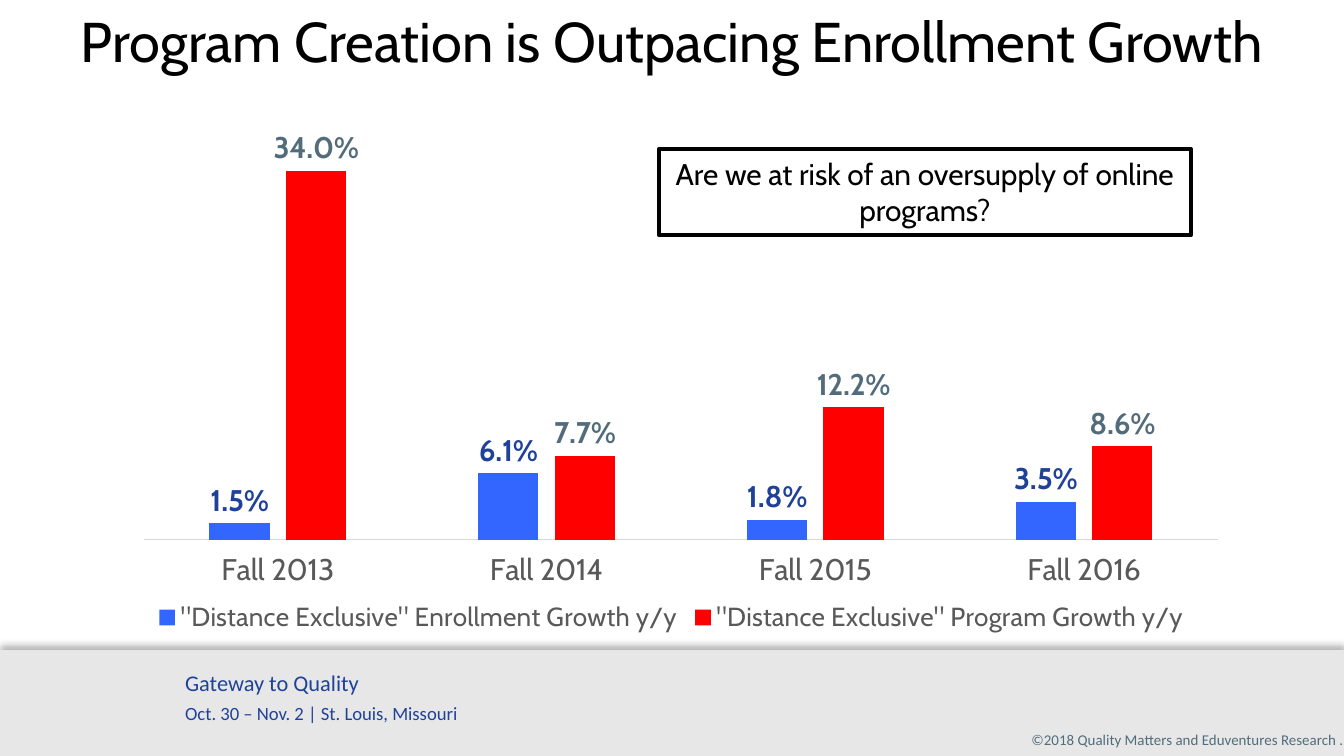
from lxml import etree
from pptx import Presentation
from pptx.chart.data import CategoryChartData
from pptx.dml.color import RGBColor
from pptx.enum.chart import XL_CHART_TYPE as ChartType, XL_LABEL_POSITION as LabelPos
from pptx.enum.chart import XL_LEGEND_POSITION as LegendPos, XL_TICK_MARK as TickMark
from pptx.enum.chart import XL_TICK_LABEL_POSITION as TickLabelPos
from pptx.enum.shapes import MSO_SHAPE as Shape
from pptx.enum.text import MSO_ANCHOR as Anchor, PP_ALIGN as Align
from pptx.oxml import parse_xml
from pptx.oxml.ns import nsdecls, qn
from pptx.util import Cm, Pt

COLORS = {
    "black": "000000", "white": "FFFFFF", "band": "E7E7E7", "navy": "1F419A",
    "slate": "526C7C", "gray": "595959", "axis": "D9D9D9",
    "enrollment": "3366FF", "programs": "FF0000",
}
YEARS = ["Fall 2013", "Fall 2014", "Fall 2015", "Fall 2016"]
SERIES = [
    ('"Distance Exclusive" Enrollment Growth y/y', (0.015, 0.061, 0.018, 0.035), "enrollment", "navy"),
    ('"Distance Exclusive" Program Growth y/y', (0.34, 0.077, 0.122, 0.086), "programs", "slate"),
]
PLOT_AREA = {"x": 0.017, "y": 0, "w": 0.983, "h": 0.814}


def rgb(name):
    return RGBColor.from_string(COLORS[name])


def style_font(font, color, **formats):
    font.color.rgb = rgb(color)
    for key, value in formats.items():
        setattr(font, key, value)


def write_text(sp, lines, color, font, align=Align.LEFT, gap=0, **frame):
    tf = sp.text_frame
    formats = {"word_wrap": True, "vertical_anchor": Anchor.TOP, **frame}
    for key, value in formats.items():
        setattr(tf, key, value)
    for i, (text, size) in enumerate(lines):
        p = tf.paragraphs[0] if i == 0 else tf.add_paragraph()
        p.alignment = align
        if i:
            p.space_before = Pt(gap)
        r = p.add_run()
        r.text = text
        style_font(r.font, color, name=font, size=Pt(size))


def add_box(s, box, fill, line=None):
    sp = s.shapes.add_shape(Shape.RECTANGLE, *map(Cm, box))
    sp.shadow.inherit = False
    sp.fill.solid()
    sp.fill.fore_color.rgb = rgb(fill)
    if line:
        sp.line.color.rgb = rgb(line)
        sp.line.width = Pt(2)
    else:
        sp.line.fill.background()
    return sp


def add_upward_shadow(sp):
    effects = sp._element.spPr.find(qn("a:effectLst"))
    effects.append(parse_xml(
        f'<a:outerShdw {nsdecls("a")} blurRad="{Pt(4)}" dist="{Pt(3)}" dir="16200000" '
        f'rotWithShape="0"><a:srgbClr val="{COLORS["black"]}"><a:alpha val="30000"/>'
        '</a:srgbClr></a:outerShdw>'))


def add_title(s, text, box):
    sp = s.shapes.title
    sp.left, sp.top, sp.width, sp.height = map(Cm, box)
    write_text(sp, [(text, 30)], "black", "Cabin", Align.CENTER)


def set_plot_layout(chart):
    plot_area = chart._chartSpace.chart.plotArea
    for old in plot_area.findall(qn("c:layout")):
        plot_area.remove(old)
    layout = etree.Element(qn("c:layout"))
    manual = etree.SubElement(layout, qn("c:manualLayout"))
    settings = {"layoutTarget": "inner", "xMode": "edge", "yMode": "edge", **PLOT_AREA}
    for key, value in settings.items():
        etree.SubElement(manual, qn(f"c:{key}"), val=str(value))
    plot_area.insert(0, layout)


def style_axes(chart):
    axis = chart.category_axis
    for key in ("major_tick_mark", "minor_tick_mark"):
        setattr(axis, key, TickMark.NONE)
    axis.tick_label_position = TickLabelPos.LOW
    style_font(axis.tick_labels.font, "gray", name="Cabin", size=Pt(16))
    axis.format.line.color.rgb = rgb("axis")
    axis.format.line.width = Pt(0.75)
    values = {"minimum_scale": 0, "maximum_scale": 0.4,
              "has_major_gridlines": False, "visible": False}
    for key, value in values.items():
        setattr(chart.value_axis, key, value)


def style_series(series, color, label_color):
    series.format.fill.solid()
    series.format.fill.fore_color.rgb = rgb(color)
    labels = series.data_labels
    formats = {"show_value": True, "number_format": "0.0%",
               "number_format_is_linked": False, "position": LabelPos.OUTSIDE_END}
    for key, value in formats.items():
        setattr(labels, key, value)
    style_font(labels.font, label_color, name="Cabin", size=Pt(16), bold=True)


def add_growth_chart(s, box):
    data = CategoryChartData(number_format="0.00%")
    data.categories = YEARS
    for name, values, *_ in SERIES:
        data.add_series(name, values)
    chart = s.shapes.add_chart(ChartType.COLUMN_CLUSTERED, *map(Cm, box), data).chart
    style_font(chart.font, "black", name="Cabin", size=Pt(10))
    chart.has_title = False
    chart.has_legend = True
    chart.legend.position = LegendPos.BOTTOM
    chart.legend.include_in_layout = False
    style_font(chart.legend.font, "gray", name="Cabin", size=Pt(14))
    plot = chart.plots[0]
    for key, value in {"gap_width": 219, "overlap": -27, "vary_by_categories": False}.items():
        setattr(plot, key, value)
    for series, (_, _, color, label_color) in zip(plot.series, SERIES):
        style_series(series, color, label_color)
    style_axes(chart)
    set_plot_layout(chart)


def add_footer(s):
    add_upward_shadow(add_box(s, (0, 12.29, 25.4, 2), "band"))
    event = s.shapes.add_textbox(*map(Cm, (3.25, 12.52, 16.23, 1.3)))
    write_text(event, [("Gateway to Quality", 12), ("Oct. 30 – Nov. 2 | St. Louis, Missouri", 10)],
               "navy", "Calibri", gap=3)
    rights = s.shapes.add_textbox(*map(Cm, (18.97, 13.69, 6.43, 0.6)))
    write_text(rights, [("©2018 Quality Matters and Eduventures Research .", 8)],
               "slate", "Calibri", Align.RIGHT, margin_right=0)


def main():
    prs = Presentation()
    prs.slide_width, prs.slide_height = Cm(25.4), Cm(14.29)
    s = prs.slides.add_slide(prs.slide_layouts[5])
    add_footer(s)
    add_growth_chart(s, (2.36, 2, 20.68, 10.08))
    question = add_box(s, (12.45, 2.82, 10.06, 1.63), "white", "black")
    write_text(question, [("Are we at risk of an oversupply of online programs?", 16)],
               "black", "Cabin", Align.CENTER)
    add_title(s, "Program Creation is Outpacing Enrollment Growth", (0, 0, 25.4, 1.55))
    prs.save("out.pptx")


if __name__ == "__main__":
    main()
